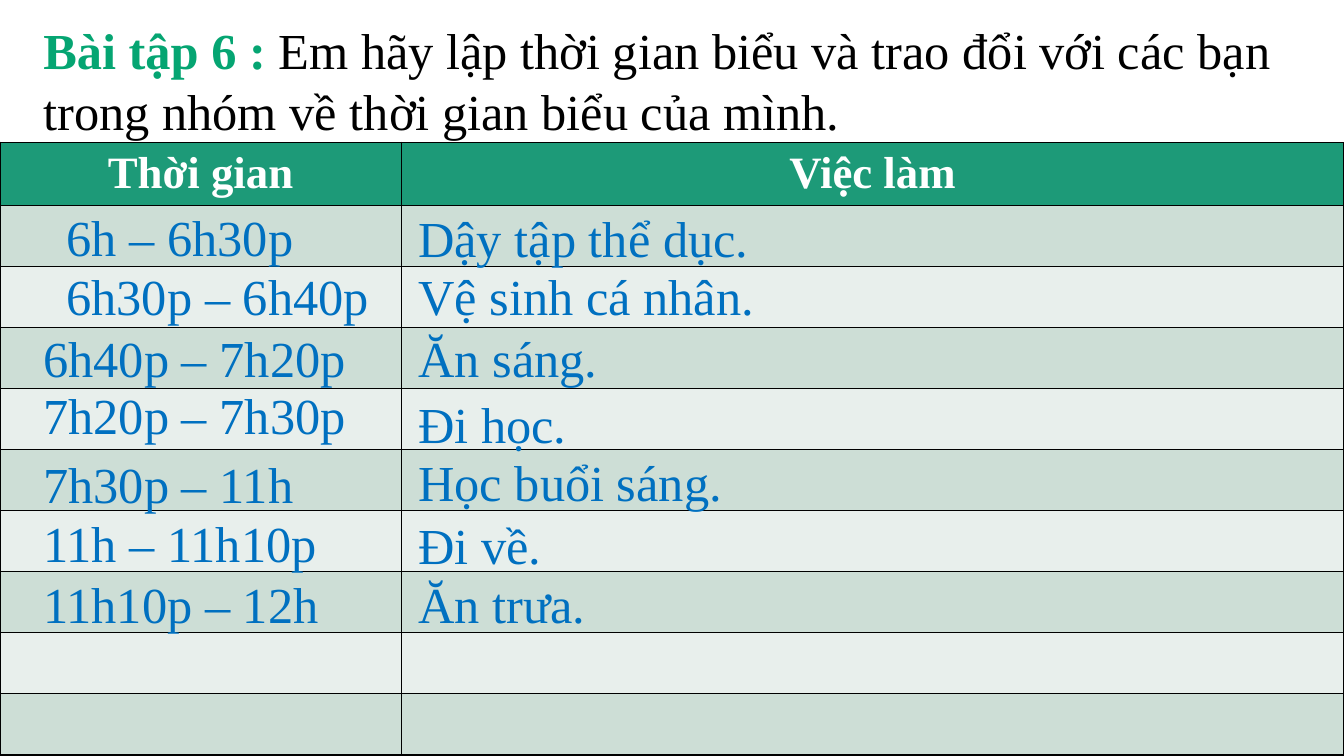
"""Build a slide with a pupil's daily timetable exercise."""
from dataclasses import dataclass

from lxml import etree
from pptx import Presentation
from pptx import util as u
from pptx.dml import color
from pptx.enum import text
from pptx.oxml import ns
from pptx.slide import Slide
from pptx.table import _Cell as Cell
from pptx.text.text import TextFrame


@dataclass(frozen=True)
class Theme:
    font: str = "Times New Roman"
    body_size: int = 36
    header_size: int = 32
    accent: str = "05A572"
    ink: str = "000000"
    answer: str = "0070C0"
    header_text: str = "FFFFFF"
    header_fill: str = "1D9A78"
    bands: tuple[str, str] = ("CDDED6", "E8EFEC")
    border_width: int = 1


@dataclass(frozen=True)
class Span:
    words: str
    colour: str
    size: int
    bold: bool = False


@dataclass(frozen=True)
class Entry:
    words: str
    left: float
    top: float
    width: float


THEME = Theme()
TITLE = (
    Span("Bài tập 6 : ", THEME.accent, THEME.body_size, True),
    Span("Em hãy lập thời gian biểu và trao đổi với các bạn trong nhóm "
         "về thời gian biểu của mình.", THEME.ink, THEME.body_size),
)
HEADERS = ("Thời gian", "Việc làm")
COLUMN_WIDTHS = (3.98, 9.35)
ROW_COUNT = 10
TABLE_TOP, TABLE_HEIGHT, HEADER_HEIGHT = 1.41, 6.08, 0.63
TIME_LEFT, INDENTED_LEFT, TASK_LEFT = 0.33, 0.56, 4.05
TIME_WIDTH, TASK_WIDTH, ENTRY_HEIGHT = 3.71, 3.88, 0.71
ENTRIES = (
    Entry("6h – 6h30p", INDENTED_LEFT, 2, TIME_WIDTH),
    Entry("Dậy tập thể dục.", TASK_LEFT, 2.01, TASK_WIDTH),
    Entry("6h30p – 6h40p", INDENTED_LEFT, 2.58, TIME_WIDTH),
    Entry("Vệ sinh cá nhân.", TASK_LEFT, 2.58, TASK_WIDTH),
    Entry("6h40p – 7h20p", TIME_LEFT, 3.2, TIME_WIDTH),
    Entry("Ăn sáng.", TASK_LEFT, 3.2, TASK_WIDTH),
    Entry("7h20p – 7h30p", TIME_LEFT, 3.76, TIME_WIDTH),
    Entry("Đi học.", TASK_LEFT, 3.85, TASK_WIDTH),
    Entry("7h30p – 11h", TIME_LEFT, 4.45, TIME_WIDTH),
    Entry("Học buổi sáng.", TASK_LEFT, 4.43, TASK_WIDTH),
    Entry("11h – 11h10p", TIME_LEFT, 5.03, TIME_WIDTH),
    Entry("Đi về.", TASK_LEFT, 5.05, TASK_WIDTH),
    Entry("11h10p – 12h", TIME_LEFT, 5.64, TIME_WIDTH),
    Entry("Ăn trưa.", TASK_LEFT, 5.64, TASK_WIDTH),
)


def write(frame: TextFrame, spans: tuple[Span, ...], align: text.PP_ALIGN) -> None:
    """Write the spans as runs of the frame's first paragraph."""
    frame.word_wrap = True
    para = frame.paragraphs[0]
    para.alignment = align
    for span in spans:
        run = para.add_run()
        run.text = span.words
        run.font.name = THEME.font
        run.font.size = u.Pt(span.size)
        run.font.bold = span.bold
        run.font.color.rgb = color.RGBColor.from_string(span.colour)


def paint(cell: Cell, fill: str) -> None:
    """Give a cell its four borders and its fill."""
    properties = cell._tc.get_or_add_tcPr()
    for side in ("a:lnL", "a:lnR", "a:lnT", "a:lnB"):
        line = etree.SubElement(properties, ns.qn(side), w=str(u.Pt(THEME.border_width)))
        solid = etree.SubElement(line, ns.qn("a:solidFill"))
        etree.SubElement(solid, ns.qn("a:srgbClr"), val=THEME.ink)
    cell.fill.solid()
    cell.fill.fore_color.rgb = color.RGBColor.from_string(fill)


def add_title(page: Slide) -> None:
    """Place and write the exercise title."""
    title = page.shapes.title
    title.left, title.top = u.Inches(0.33), u.Inches(0.14)
    title.width, title.height = u.Inches(13), u.Inches(1.31)
    title.text_frame.auto_size = text.MSO_AUTO_SIZE.NONE
    title.text_frame.vertical_anchor = text.MSO_ANCHOR.TOP
    write(title.text_frame, TITLE, text.PP_ALIGN.LEFT)


def add_timetable(page: Slide) -> None:
    """Draw the banded timetable with its header row."""
    table = page.shapes.add_table(
        ROW_COUNT, len(HEADERS), u.Inches(0), u.Inches(TABLE_TOP),
        u.Inches(sum(COLUMN_WIDTHS)), u.Inches(TABLE_HEIGHT)).table
    for column, width in zip(table.columns, COLUMN_WIDTHS):
        column.width = u.Inches(width)
    band_height = (TABLE_HEIGHT - HEADER_HEIGHT) / (ROW_COUNT - 1)
    for index, row in enumerate(table.rows):
        row.height = u.Inches(band_height if index else HEADER_HEIGHT)
        fill = THEME.bands[(index - 1) % 2] if index else THEME.header_fill
        for cell in row.cells:
            paint(cell, fill)
    for cell, words in zip(table.rows[0].cells, HEADERS):
        cell.vertical_anchor = text.MSO_ANCHOR.MIDDLE
        heading = Span(words, THEME.header_text, THEME.header_size, True)
        write(cell.text_frame, (heading,), text.PP_ALIGN.CENTER)


def add_entry(page: Slide, entry: Entry) -> None:
    """Add one timetable answer as a text box."""
    box = page.shapes.add_textbox(
        u.Inches(entry.left), u.Inches(entry.top),
        u.Inches(entry.width), u.Inches(ENTRY_HEIGHT))
    box.text_frame.auto_size = text.MSO_AUTO_SIZE.SHAPE_TO_FIT_TEXT
    span = Span(entry.words, THEME.answer, THEME.body_size)
    write(box.text_frame, (span,), text.PP_ALIGN.LEFT)


def main() -> None:
    """Build and save the deck."""
    deck = Presentation()
    deck.slide_width, deck.slide_height = u.Inches(13.33), u.Inches(7.5)
    page = deck.slides.add_slide(deck.slide_layouts.get_by_name("Title Only"))
    add_title(page)
    add_timetable(page)
    for entry in ENTRIES:
        add_entry(page, entry)
    deck.save("out.pptx")


if __name__ == "__main__":
    main()
